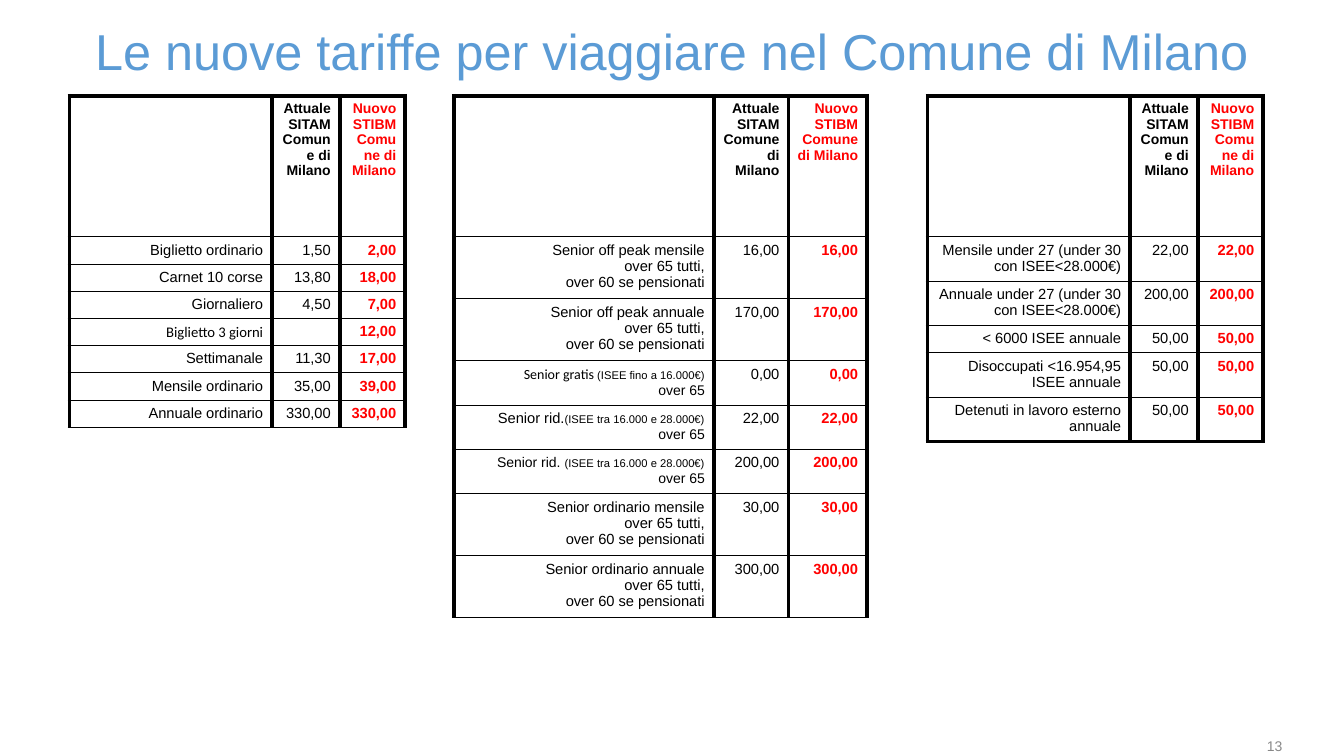
from lxml import etree
from pptx import Presentation, util as u
from pptx.dml.color import RGBColor
from pptx.enum import text
from pptx.oxml.ns import qn

BLACK, RED, BLUE, GREY = "000000", "FF0000", "5B9BD5", "888888"
THICK, THIN = 3, 0.75
TOP, HEADER_HEIGHT = 0.95, 1.4
NARROW_COLUMNS = (2.01, 0.67, 0.65)
WIDE_COLUMNS = (2.58, 0.74, 0.78)


def hex_color(value):
    return RGBColor.from_string(value)


def style_span(span, size, color=BLACK, bold=False, font="Arial"):
    span.font.size = u.Pt(size)
    span.font.name = font
    span.font.bold = bold
    span.font.color.rgb = hex_color(color)


def add_label(page, place, content, size, color, align, inset, wrap):
    box = page.shapes.add_textbox(*[u.Inches(n) for n in place])
    frame = box.text_frame
    frame.margin_left = frame.margin_right = u.Inches(inset)
    frame.margin_top = frame.margin_bottom = u.Inches(inset)
    frame.vertical_anchor = text.MSO_ANCHOR.MIDDLE
    frame.auto_size = text.MSO_AUTO_SIZE.SHAPE_TO_FIT_TEXT
    frame.word_wrap = wrap
    frame.text = content
    para = frame.paragraphs[0]
    para.alignment = align
    style_span(para.runs[0], size, color)


def set_borders(cell, top, bottom):
    """Vertical rules are always thick; horizontal ones vary by row."""
    properties = cell._tc.get_or_add_tcPr()
    sides = (("L", THICK), ("R", THICK), ("T", top), ("B", bottom))
    for position, (side, width) in enumerate(sides):
        line = etree.Element(qn(f"a:ln{side}"), w=str(u.Pt(width)))
        fill = etree.SubElement(line, qn("a:solidFill"))
        etree.SubElement(fill, qn("a:srgbClr"), val=BLACK)
        properties.insert(position, line)


def fill_cell(cell, content, size, color=BLACK, bold=False):
    """Content is text, or a list of paragraphs made of (text, size, font)."""
    cell.fill.background()
    cell.margin_left = cell.margin_right = u.Inches(0.09)
    cell.margin_top, cell.margin_bottom = u.Inches(0.05), u.Inches(0.04)
    frame = cell.text_frame
    if isinstance(content, str):
        frame.text = content
        for para in frame.paragraphs:
            para.alignment = text.PP_ALIGN.RIGHT
            para.font.size = u.Pt(size)
            for span in para.runs:
                style_span(span, size, color, bold)
        return
    for index, pieces in enumerate(content):
        para = frame.add_paragraph() if index else frame.paragraphs[0]
        para.alignment = text.PP_ALIGN.RIGHT
        for words, points, font in pieces:
            span = para.add_run()
            span.text = words
            style_span(span, points, color, bold, font)


def row_height(label):
    lines = label.count("\n") + 1 if isinstance(label, str) else len(label)
    return 0.1 + 0.17 * lines


def add_fares(page, left, columns, fares, last_rule=THIN):
    heights = [HEADER_HEIGHT] + [row_height(fare[0]) for fare in fares]
    frame = page.shapes.add_table(
        len(heights), len(columns), u.Inches(left), u.Inches(TOP),
        u.Inches(sum(columns)), u.Inches(sum(heights)))
    table = frame.table
    table.first_row = table.horz_banding = False
    for column, width in zip(table.columns, columns):
        column.width = u.Inches(width)
    for row, height in zip(table.rows, heights):
        row.height = u.Inches(height)

    header = ("", "Attuale SITAM Comune di Milano", "Nuovo\nSTIBM Comune di Milano")
    for r, values in enumerate([header] + fares):
        for c, content in enumerate(values):
            cell = table.cell(r, c)
            fill_cell(cell, content, size=10.5 if r else 10,
                      color=RED if c == 2 else BLACK,
                      bold=c == 2 or r == 0)
            set_borders(cell, top=THIN if r else THICK,
                        bottom=last_rule if r == len(fares) else THIN)


def senior(kind):
    return f"Senior {kind}\nover 65 tutti,\nover 60 se pensionati"


def senior_isee(opening, limits):
    return [opening + [(limits, 8, "Arial")], [("over 65", 10, "Arial")]]


def main():
    deck = Presentation()
    deck.slide_width, deck.slide_height = u.Inches(13.33), u.Inches(7.5)
    page = deck.slides.add_slide(deck.slide_layouts[6])

    # Title
    add_label(page, (0.01, 0.19, 13.31, 0.61),
              "Le nuove tariffe per viaggiare nel Comune di Milano",
              36, BLUE, text.PP_ALIGN.CENTER, inset=0, wrap=True)

    # Ordinary fares
    add_fares(page, 0.69, NARROW_COLUMNS, [
        ("Biglietto ordinario", "1,50", "2,00"),
        ("Carnet 10 corse", "13,80", "18,00"),
        ("Giornaliero", "4,50", "7,00"),
        ([[("Biglietto 3 giorni", 10.5, "Calibri")]], "", "12,00"),
        ("Settimanale", "11,30", "17,00"),
        ("Mensile ordinario", "35,00", "39,00"),
        ("Annuale ordinario", "330,00", "330,00"),
    ])

    # Senior fares
    middle_band = "(ISEE tra 16.000 e 28.000€)"
    add_fares(page, 4.5, WIDE_COLUMNS, [
        (senior("off peak mensile"), "16,00", "16,00"),
        (senior("off peak annuale"), "170,00", "170,00"),
        (senior_isee([("Senior gratis ", 10, "Calibri")],
                     "(ISEE fino a 16.000€)"), "0,00", "0,00"),
        (senior_isee([("Senior rid.", 10.5, "Arial")], middle_band),
         "22,00", "22,00"),
        (senior_isee([("Senior rid.", 10, "Arial"), (" ", 10.5, "Arial")],
                     middle_band), "200,00", "200,00"),
        (senior("ordinario mensile"), "30,00", "30,00"),
        (senior("ordinario annuale"), "300,00", "300,00"),
    ])

    # Reduced fares
    add_fares(page, 9.2, NARROW_COLUMNS, [
        ("Mensile under 27 (under 30 con ISEE<28.000€)", "22,00", "22,00"),
        ("Annuale under 27 (under 30 con ISEE<28.000€)", "200,00", "200,00"),
        ("< 6000 ISEE annuale", "50,00", "50,00"),
        ("Disoccupati <16.954,95 ISEE annuale", "50,00", "50,00"),
        ("Detenuti in lavoro esterno annuale", "50,00", "50,00"),
    ], last_rule=THICK)

    # Page number
    add_label(page, (12.5, 7.27, 0.27, 0.27), "13", 10, GREY,
              text.PP_ALIGN.RIGHT, inset=0.05, wrap=False)

    deck.save("out.pptx")


if __name__ == "__main__":
    main()
